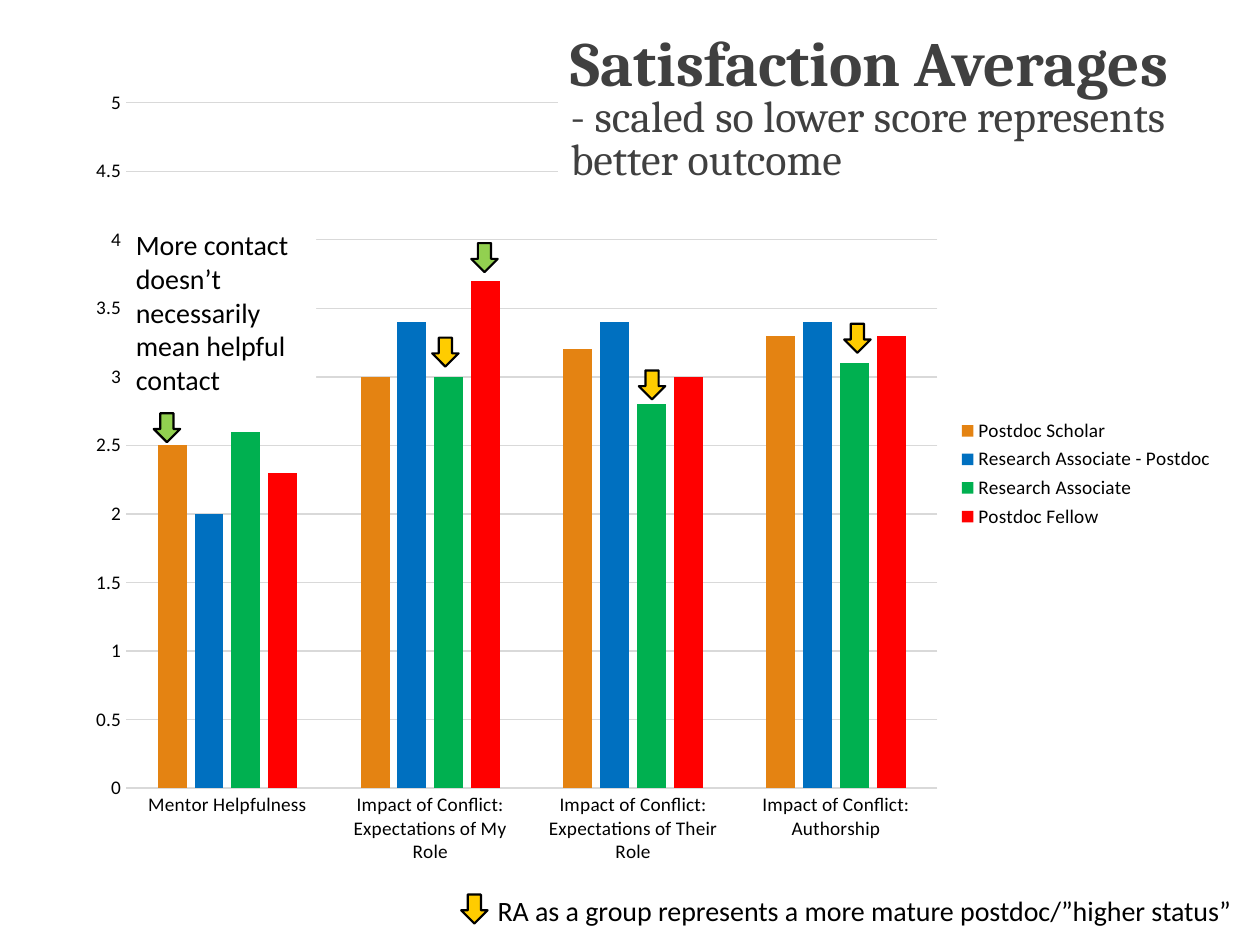
from lxml import etree
from pptx import Presentation
from pptx.chart.data import CategoryChartData
from pptx.dml.color import RGBColor
from pptx.enum.chart import XL_CHART_TYPE, XL_LEGEND_POSITION, XL_TICK_MARK
from pptx.enum.shapes import MSO_SHAPE
from pptx.enum.text import MSO_ANCHOR, MSO_AUTO_SIZE, PP_ALIGN
from pptx.oxml.ns import qn
from pptx.util import Inches, Pt

COLUMN = XL_CHART_TYPE.COLUMN_CLUSTERED
RIGHT = XL_LEGEND_POSITION.RIGHT
NONE = XL_TICK_MARK.NONE
ARROW, RECT = MSO_SHAPE.DOWN_ARROW, MSO_SHAPE.RECTANGLE
TOP, MIDDLE = MSO_ANCHOR.TOP, MSO_ANCHOR.MIDDLE
GROW, FIXED = MSO_AUTO_SIZE.SHAPE_TO_FIT_TEXT, MSO_AUTO_SIZE.NONE
LEFT = PP_ALIGN.LEFT

# The slide is a grid of 100 columns by 75 rows of square cells.
COLS, ROWS = 100, 75
CELL = Inches(0.1)

COLORS = {
    "white": "FFFFFF", "black": "000000", "title": "404040", "grid": "D9D9D9",
    "orange": "E48312", "blue": "0070C0", "green": "00B050", "red": "FF0000",
    "lime": "92D050", "gold": "FFCC00",
}
CATS = [
    "Mentor Helpfulness",
    "Impact of Conflict: Expectations of My Role",
    "Impact of Conflict: Expectations of Their Role",
    "Impact of Conflict: Authorship",
]
SERIES = [
    ("Postdoc Scholar", "orange", (2.5, 3, 3.2, 3.3)),
    ("Research Associate - Postdoc", "blue", (2, 3.4, 3.4, 3.4)),
    ("Research Associate", "green", (2.6, 3, 2.8, 3.1)),
    ("Postdoc Fellow", "red", (2.3, 3.7, 3, 3.3)),
]
ARROWS = [
    (37.4, 19.3, "lime"), (12.2, 32.8, "lime"),
    (36.6, 71, "gold"), (50.7, 29.4, "gold"),
    (67, 25.7, "gold"), (34.3, 26.8, "gold"),
]
PLOT = {"x": 0.05, "y": 0.04, "w": 0.7, "h": 0.85}


def rgb(name):
    return RGBColor.from_string(COLORS[name])


def cells(*sizes):
    return [int(size * CELL) for size in sizes]


def style_line(line, color, width):
    line.color.rgb = rgb(color)
    line.width = Pt(width)


def add_box(slide, kind, box, fill, line=None):
    shape = slide.shapes.add_shape(kind, *cells(*box))
    shape.shadow.inherit = False
    shape.fill.solid()
    shape.fill.fore_color.rgb = rgb(fill)
    if line:
        style_line(shape.line, line, 1.25)
    else:
        shape.line.fill.background()
    return shape


def write(shape, *lines, sizes=(16,), bold=False, font="Calibri",
          color="black", anchor=TOP, fit=GROW, space=None):
    """Set one paragraph with line breaks; bold applies to the first line."""
    frame = shape.text_frame
    frame.word_wrap = True
    frame.auto_size = fit
    frame.vertical_anchor = anchor
    para = frame.paragraphs[0]
    para.alignment = LEFT
    para.line_spacing = space
    for i, (line, size) in enumerate(zip(lines, sizes)):
        if i:
            para.add_line_break()
        run = para.add_run()
        run.text = line
        run.font.size = Pt(size)
        run.font.bold = bold and i == 0
        run.font.name = font
        run.font.color.rgb = rgb(color)


def fix_plot(chart):
    """Pin the inner plot area to shares of the chart frame."""
    area = chart.plots[0]._element.getparent()
    for old in area.findall(qn("c:layout")):
        area.remove(old)
    layout = etree.Element(qn("c:layout"))
    manual = etree.SubElement(layout, qn("c:manualLayout"))
    parts = {"layoutTarget": "inner", "xMode": "edge", "yMode": "edge", **PLOT}
    for tag, val in parts.items():
        etree.SubElement(manual, qn("c:" + tag)).set("val", str(val))
    area.insert(0, layout)


def add_bars(slide, box):
    data = CategoryChartData()
    data.categories = CATS
    for name, _, vals in SERIES:
        data.add_series(name, vals)
    chart = slide.shapes.add_chart(COLUMN, *cells(*box), data).chart
    chart.has_title = False
    chart.font.size = Pt(11)
    chart.font.name = "Calibri"
    chart.font.color.rgb = rgb("black")
    chart.has_legend = True
    chart.legend.position = RIGHT
    chart.legend.include_in_layout = False

    plot = chart.plots[0]
    plot.gap_width, plot.overlap = 219, -27
    plot.vary_by_categories = False
    for bars, (_, color, _) in zip(plot.series, SERIES):
        bars.format.fill.solid()
        bars.format.fill.fore_color.rgb = rgb(color)

    for axis in (chart.category_axis, chart.value_axis):
        axis.major_tick_mark = axis.minor_tick_mark = NONE
    style_line(chart.category_axis.format.line, "grid", 0.75)
    scale = chart.value_axis
    scale.minimum_scale, scale.maximum_scale, scale.major_unit = 0, 5, 0.5
    scale.tick_labels.number_format = "General"
    scale.tick_labels.number_format_is_linked = False
    scale.format.line.fill.background()
    style_line(scale.major_gridlines.format.line, "grid", 0.75)
    fix_plot(chart)


def main():
    deck = Presentation()
    deck.slide_width, deck.slide_height = cells(COLS, ROWS)
    slide = deck.slides.add_slide(deck.slide_layouts[6])

    add_bars(slide, (5.4, 5.6, 92, 64))
    key = slide.shapes.add_textbox(*cells(38.5, 70.4, 61.5, 3.7))
    write(key, "RA as a group represents a more mature postdoc/”higher status”")
    title = add_box(slide, RECT, (44.3, 2.4, 53.6, 12.8), "white")
    write(title, "Satisfaction Averages ",
          "- scaled so lower score represents better outcome",
          sizes=(36, 25.2), bold=True, font="Cambria", color="title",
          anchor=MIDDLE, fit=FIXED, space=0.8)
    note = add_box(slide, RECT, (9.8, 17.6, 15.3, 14.5), "white")
    write(note, "More contact doesn’t necessarily mean helpful contact")
    for left, top, color in ARROWS:
        add_box(slide, ARROW, (left, top, 2.1, 2.3), color, line="black")

    deck.save("out.pptx")


if __name__ == "__main__":
    main()
